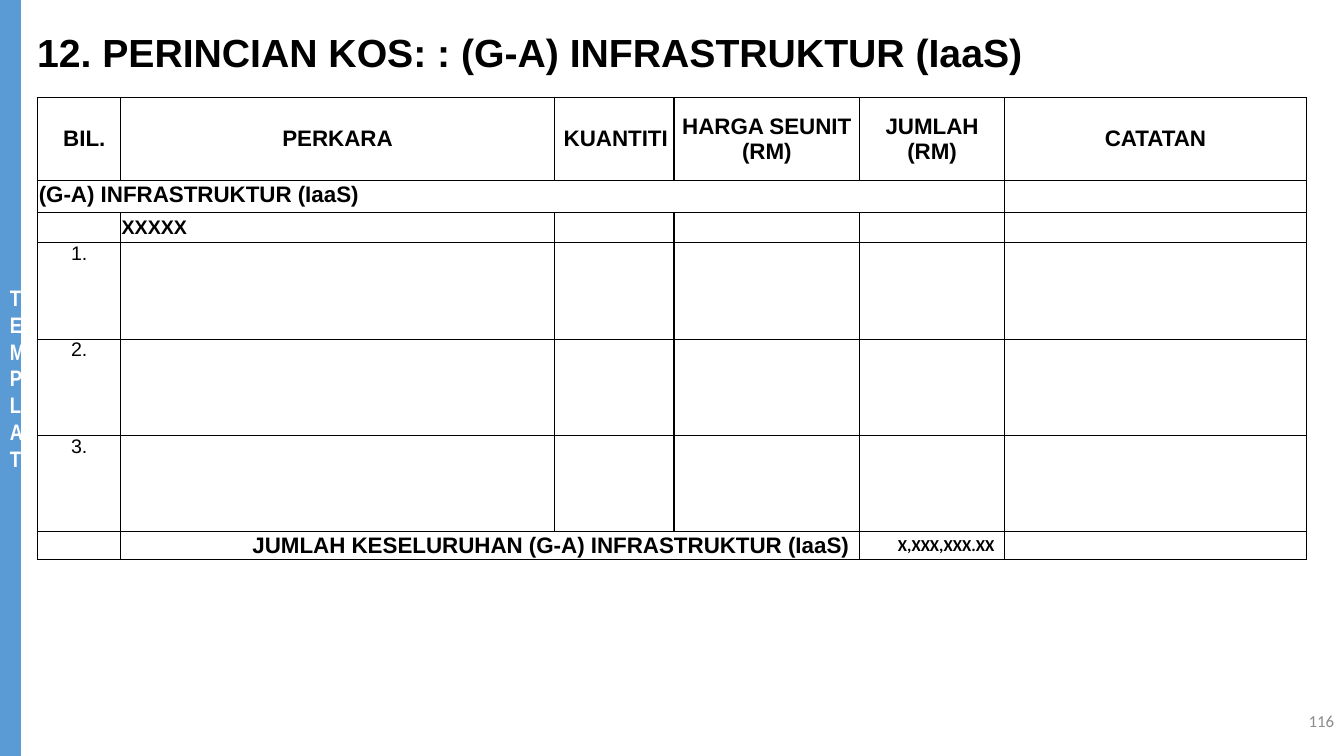
from lxml.etree import SubElement
from pptx import Presentation
from pptx.dml.color import RGBColor
from pptx.enum.shapes import MSO_SHAPE
from pptx.enum.text import MSO_ANCHOR, PP_ALIGN
from pptx.oxml.ns import qn
from pptx.util import Pt

BLACK, WHITE, BLUE, GREY = "000000", "FFFFFF", "5B9BD5", "8C8C8C"
LEFT, CENTER, RIGHT = PP_ALIGN.LEFT, PP_ALIGN.CENTER, PP_ALIGN.RIGHT

COLUMN_WIDTHS = [59.2, 309.8, 85.5, 132.5, 103.6, 215.6]
ROW_HEIGHTS = [59.4, 23, 21.5, 68.8, 68.8, 68.8, 20]
# Heading and its left indent
HEADINGS = [("BIL.", 7.2), ("PERKARA", 0), ("KUANTITI", 2.2),
            ("HARGA SEUNIT\n(RM)", 0), ("JUMLAH\n(RM)", 0), ("CATATAN", 0)]


def color(hex_string):
    return RGBColor.from_string(hex_string)


def write(frame, text, size, align=LEFT, font="Arial", ink=BLACK, bold=True,
          spacing=None, indent=0):
    frame.text = text
    for paragraph in frame.paragraphs:
        paragraph.alignment = align
        if spacing:
            paragraph.line_spacing = spacing
        if indent:
            paragraph._p.get_or_add_pPr().set("marL", str(Pt(indent)))
        paragraph.font.name = font
        paragraph.font.size = Pt(size)
        paragraph.font.bold = bold
        paragraph.font.color.rgb = color(ink)


def add_sidebar(slide, height):
    sidebar = slide.shapes.add_shape(MSO_SHAPE.RECTANGLE, 0, 0, Pt(15), height)
    sidebar.shadow.inherit = False
    sidebar.fill.solid()
    sidebar.fill.fore_color.rgb = color(BLUE)
    sidebar.line.fill.background()
    sidebar.text_frame.word_wrap = True
    sidebar.text_frame.vertical_anchor = MSO_ANCHOR.MIDDLE
    write(sidebar.text_frame, "TEMPLAT", 16, CENTER, "Arial Narrow", WHITE)


def add_label(slide, left, top, width, height, text, size, **style):
    frame = slide.shapes.add_textbox(Pt(left), Pt(top), Pt(width), Pt(height)).text_frame
    frame.word_wrap = True
    frame.vertical_anchor = MSO_ANCHOR.MIDDLE
    write(frame, text, size, **style)


def format_cell(cell):
    cell.margin_left = cell.margin_right = Pt(0.7)
    cell.margin_top = cell.margin_bottom = 0
    cell.vertical_anchor = MSO_ANCHOR.MIDDLE
    # Borders come before the fill in the cell properties
    properties = cell._tc.get_or_add_tcPr()
    for side in ("a:lnL", "a:lnR", "a:lnT", "a:lnB"):
        border = SubElement(properties, qn(side), w=str(Pt(1)))
        SubElement(SubElement(border, qn("a:solidFill")), qn("a:srgbClr"), val=BLACK)
    cell.fill.solid()
    cell.fill.fore_color.rgb = color(WHITE)
    # Small text size keeps empty cells from stretching the low rows
    if not cell.text_frame.text:
        SubElement(cell.text_frame.paragraphs[0]._p, qn("a:endParaRPr"), sz="1000")


def add_cost_table(slide):
    costs = slide.shapes.add_table(
        len(ROW_HEIGHTS), len(COLUMN_WIDTHS), Pt(27), Pt(69.6),
        Pt(sum(COLUMN_WIDTHS)), Pt(sum(ROW_HEIGHTS))).table
    for column, width in zip(costs.columns, COLUMN_WIDTHS):
        column.width = Pt(width)
    for row, height in zip(costs.rows, ROW_HEIGHTS):
        row.height = Pt(height)

    # Headings, section and group
    for index, (heading, indent) in enumerate(HEADINGS):
        write(costs.cell(0, index).text_frame, heading, 16, CENTER, indent=indent)
    section, group = costs.cell(1, 0), costs.cell(2, 1)
    section.merge(costs.cell(1, 4))
    write(section.text_frame, "(G-A) INFRASTRUKTUR (IaaS)", 16, spacing=Pt(15.7))
    write(group.text_frame, "XXXXX", 14)

    # Numbered items
    items = [costs.cell(2 + number, 0) for number in (1, 2, 3)]
    for number, item in enumerate(items, 1):
        write(item.text_frame, f"{number}.", 14, CENTER, bold=False)

    # Grand total
    total_label, total = costs.cell(6, 1), costs.cell(6, 4)
    total_label.merge(costs.cell(6, 3))
    write(total_label.text_frame, "JUMLAH KESELURUHAN (G-A) INFRASTRUKTUR (IaaS)",
          16, RIGHT)
    write(total.text_frame, "X,XXX,XXX.XX", 12, RIGHT, "Calibri")

    for cell in costs.iter_cells():
        format_cell(cell)
    for item in items:
        item.vertical_anchor = MSO_ANCHOR.TOP
    for cell in (total_label, total):
        cell.margin_right = Pt(7.2)


def main():
    deck = Presentation()
    deck.slide_width, deck.slide_height = Pt(960), Pt(540)
    slide = deck.slides.add_slide(deck.slide_layouts[6])

    add_sidebar(slide, deck.slide_height)
    add_cost_table(slide)
    # Title and page number
    add_label(slide, 19.4, 15.8, 828, 46.8,
              "12. PERINCIAN KOS: : (G-A) INFRASTRUKTUR (IaaS)", 28, spacing=0.9)
    add_label(slide, 744, 500.4, 216, 28.8, "116", 12,
              align=RIGHT, font="Calibri", ink=GREY, bold=False)

    deck.save("out.pptx")


if __name__ == "__main__":
    main()
